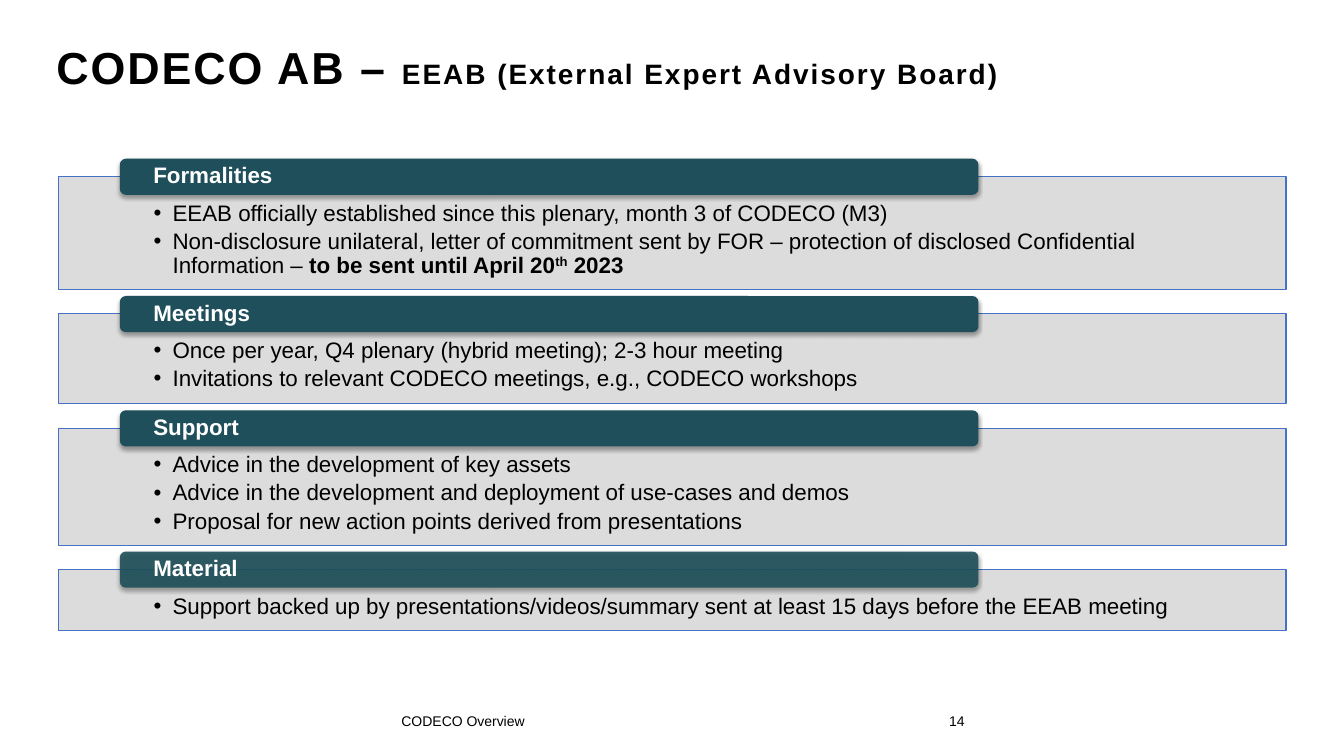
"""Build the CODECO advisory board slide with four headed panels."""
from lxml.etree import SubElement
from pptx import Presentation
from pptx.dml.color import RGBColor
from pptx.enum.shapes import MSO_SHAPE as Preset
from pptx.enum.text import MSO_ANCHOR as Anchor, PP_ALIGN as Align
from pptx.oxml.ns import qn
from pptx.util import Cm, Pt


def paint(fill, colour, alpha=100):
    fill.solid()
    fill.fore_color.rgb = RGBColor.from_string(colour)
    if alpha < 100:
        solid = fill._xPr.find(qn("a:solidFill"))
        SubElement(solid[0], qn("a:alpha"), val=str(alpha * 1000))


def write(paragraph, text, size=16, colour="000000", bold=False, **attributes):
    run = paragraph.add_run()
    run.text = text
    run.font.name = "Arial"
    run.font.size = Pt(size)
    run.font.bold = bold
    paint(run.font.fill, colour)
    for name, value in attributes.items():
        run.font._element.set(name, str(value))


sections = [
    ("Formalities", 2.85, 100, [
        [("EEAB officially established since this plenary, month 3 of CODECO (M3)", {})],
        [("Non-disclosure unilateral, letter of commitment sent by FOR – protection of "
          "disclosed Confidential Information – ", {}),
         ("to be sent until April 20", {"bold": True}),
         ("th", {"bold": True, "baseline": 30000}),
         (" 2023", {"bold": True})],
    ]),
    ("Meetings", 2.27, 100, [
        [("Once per year, Q4 plenary (hybrid meeting); 2-3 hour meeting", {})],
        [("Invitations to relevant CODECO meetings, e.g., CODECO workshops", {})],
    ]),
    ("Support", 2.95, 100, [
        [("Advice in the development of key assets", {})],
        [("Advice in the development and deployment of use-cases and demos", {})],
        [("Proposal for new action points derived from presentations", {})],
    ]),
    ("Material", 1.54, 90, [
        [("Support backed up by presentations/videos/summary sent at least 15 days "
          "before the EEAB meeting", {})],
    ]),
]

deck = Presentation()
deck.slide_width, deck.slide_height = Cm(33.87), Cm(19.05)
slide = deck.slides.add_slide(deck.slide_layouts[6])

title = slide.shapes.add_textbox(Cm(1.17), Cm(0.38), Cm(24.54), Cm(2.11)).text_frame
title.word_wrap = True
title.vertical_anchor = Anchor.BOTTOM
heading = title.paragraphs[0]
heading.line_spacing = 0.9
write(heading, "CODECO AB – ", size=32, bold=True, spc=140)
write(heading, "EEAB (External Expert Advisory Board)", size=20, bold=True, spc=140)

panel_top, panel_gap = 4.45, 0.61
for name, height, bar_alpha, points in sections:
    panel = slide.shapes.add_shape(
        Preset.RECTANGLE, Cm(1.47), Cm(panel_top), Cm(30.94), Cm(height))
    panel.shadow.inherit = False
    paint(panel.fill, "D9D9D9", 90)
    paint(panel.line.fill, "4472C4")
    panel.line.width = Pt(0.75)
    body = panel.text_frame
    body.word_wrap = True
    body.vertical_anchor = Anchor.TOP
    body.margin_left = body.margin_right = Cm(2.4)
    body.margin_top, body.margin_bottom = Cm(0.64), Cm(0.3)
    for index, runs in enumerate(points):
        point = body.add_paragraph() if index else body.paragraphs[0]
        properties = point._p.get_or_add_pPr()
        properties.set("marL", str(Cm(0.48)))
        properties.set("indent", str(-Cm(0.48)))
        SubElement(properties, qn("a:buFont"), typeface="Arial")
        SubElement(properties, qn("a:buChar"), char="•")
        point.level = 1
        point.alignment = Align.LEFT
        point.line_spacing = 0.9
        point.space_after = Pt(2.8)
        for text, style in runs:
            write(point, text, **style)

    bar = slide.shapes.add_shape(
        Preset.ROUNDED_RECTANGLE, Cm(3.02), Cm(panel_top - 0.45), Cm(21.64), Cm(0.91))
    paint(bar.fill, "1E4F5A", bar_alpha)
    bar.line.fill.background()
    bar.shadow.inherit = False
    effects = bar._element.spPr.find(qn("a:effectLst"))
    shadow = SubElement(effects, qn("a:outerShdw"), blurRad=str(Pt(3.1)),
                        dist=str(Pt(1.8)), dir="5400000", rotWithShape="0")
    shade = SubElement(shadow, qn("a:srgbClr"), val="000000")
    SubElement(shade, qn("a:alpha"), val="35000")
    label = bar.text_frame
    label.word_wrap = True
    label.vertical_anchor = Anchor.MIDDLE
    label.margin_left = label.margin_right = Cm(0.8)
    label.margin_top = label.margin_bottom = 0
    caption = label.paragraphs[0]
    caption.alignment = Align.LEFT
    caption.line_spacing = 0.9
    write(caption, name, colour="FFFFFF", bold=True)

    panel_top += height + panel_gap

for text, left, width, alignment in [
    ("CODECO Overview", 6.83, 9.68, Align.CENTER),
    ("14", 16.94, 7.62, Align.RIGHT),
]:
    footer = slide.shapes.add_textbox(Cm(left), Cm(17.65), Cm(width), Cm(1.02)).text_frame
    footer.word_wrap = True
    footer.vertical_anchor = Anchor.MIDDLE
    footer.paragraphs[0].alignment = alignment
    write(footer.paragraphs[0], text, size=10)

deck.save("out.pptx")
